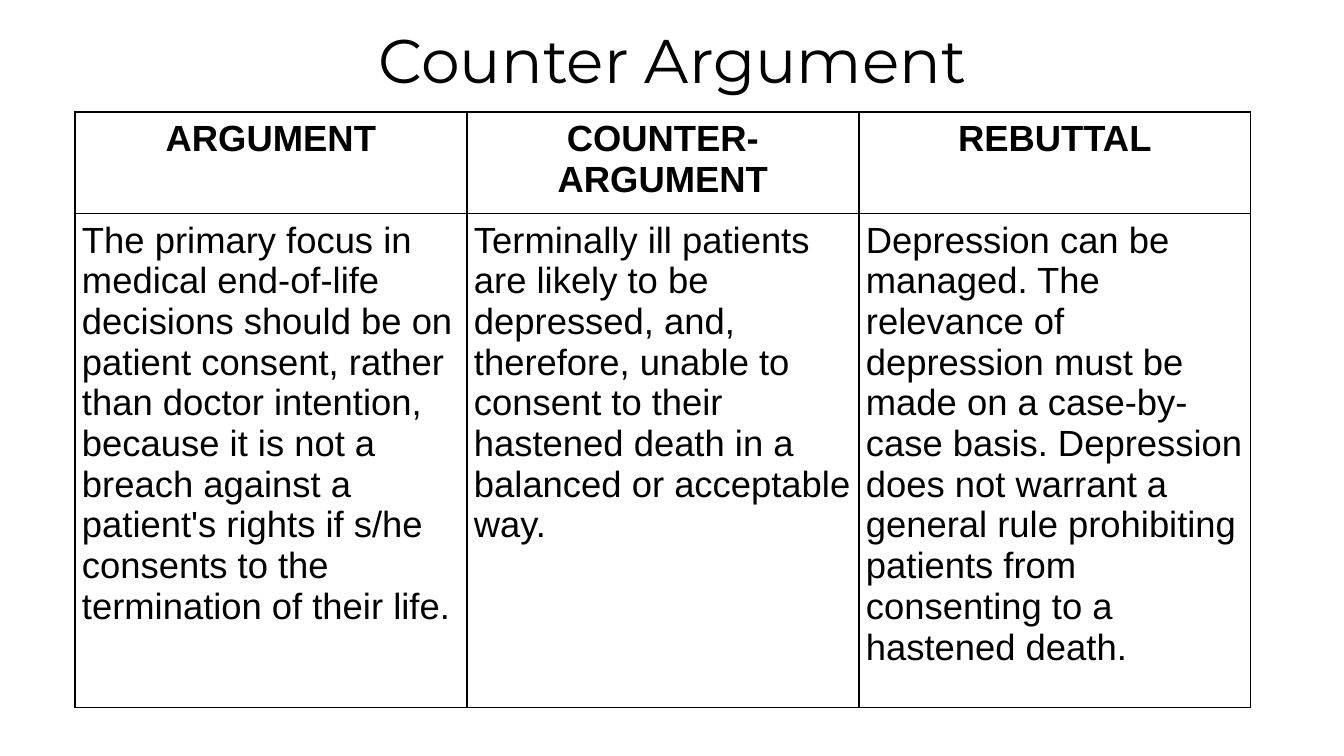
import pptx
import pptx.dml.color
import pptx.enum.text
import pptx.oxml
import pptx.oxml.ns
import pptx.util

EMU_PER_PX = 914400 / 100.8
BLACK = pptx.dml.color.RGBColor(0x00, 0x00, 0x00)
CENTER = pptx.enum.text.PP_ALIGN.CENTER
LEFT = pptx.enum.text.PP_ALIGN.LEFT

TITLE_FORMAT = {"name": "Montserrat", "size": pptx.util.Pt(44)}
HEADER_FORMAT = {"name": "Arial", "size": pptx.util.Pt(26), "bold": True}
BODY_FORMAT = {"name": "Arial", "size": pptx.util.Pt(26), "bold": False}

COLUMNS = {
    "ARGUMENT": (
        "The primary focus in medical end-of-life decisions should be on patient "
        "consent, rather than doctor intention, because it is not a breach against "
        "a patient's rights if s/he consents to the termination of their life."
    ),
    "COUNTER-ARGUMENT": (
        "Terminally ill patients are likely to be depressed, and, therefore, unable "
        "to consent to their hastened death in a balanced or acceptable way."
    ),
    "REBUTTAL": (
        "Depression can be managed. The relevance of depression must be made on a "
        "case-by-case basis. Depression does not warrant a general rule prohibiting "
        "patients from consenting to a hastened death."
    ),
}


def px(length):
    return pptx.util.Emu(round(length * EMU_PER_PX))


def write_text(frame, text, alignment, font_format):
    para = frame.paragraphs[0]
    para.alignment = alignment
    span = para.add_run()
    span.text = text
    for name, value in font_format.items():
        setattr(span.font, name, value)
    span.font.color.rgb = BLACK
    return para


def add_title(page, left, top, width, height):
    box = page.shapes.add_textbox(px(left), px(top), px(width), px(height))
    frame = box.text_frame
    frame.word_wrap = True
    frame.vertical_anchor = pptx.enum.text.MSO_ANCHOR.MIDDLE
    para = write_text(frame, "Counter Argument", CENTER, TITLE_FORMAT)
    para.line_spacing = 0.9


def add_borders(cell):
    properties = cell._tc.get_or_add_tcPr()
    # Border lines must come before the cell fill
    for position, side in enumerate(("lnL", "lnR", "lnT", "lnB")):
        border = pptx.oxml.parse_xml(
            f'<a:{side} {pptx.oxml.ns.nsdecls("a")} w="{pptx.util.Pt(1)}">'
            f'<a:solidFill><a:srgbClr val="{BLACK}"/></a:solidFill></a:{side}>'
        )
        properties.insert(position, border)


def fill_cell(cell, text, alignment, font_format):
    for side in ("left", "right", "top", "bottom"):
        setattr(cell, f"margin_{side}", px(7))
    cell.fill.background()
    add_borders(cell)
    write_text(cell.text_frame, text, alignment, font_format)


def add_argument_table(page, left, top, width, header_height, body_height):
    count = len(COLUMNS)
    table = page.shapes.add_table(
        2, count, px(left), px(top), px(width), px(header_height + body_height)
    ).table
    table.first_row = False
    table.horz_banding = False
    table.rows[0].height = px(header_height)
    table.rows[1].height = px(body_height)
    for index, (heading, statement) in enumerate(COLUMNS.items()):
        table.columns[index].width = px(width / count)
        fill_cell(table.cell(0, index), heading, CENTER, HEADER_FORMAT)
        fill_cell(table.cell(1, index), statement, LEFT, BODY_FORMAT)


def main():
    deck = pptx.Presentation()
    deck.slide_width = px(1344)
    deck.slide_height = px(756)
    page = deck.slides.add_slide(deck.slide_layouts[6])

    # Title
    add_title(page, 93, 14, 1159, 99)
    # Argument, counter-argument and rebuttal
    add_argument_table(page, 75, 112, 1176, 96, 460)

    deck.save("out.pptx")


if __name__ == "__main__":
    main()
